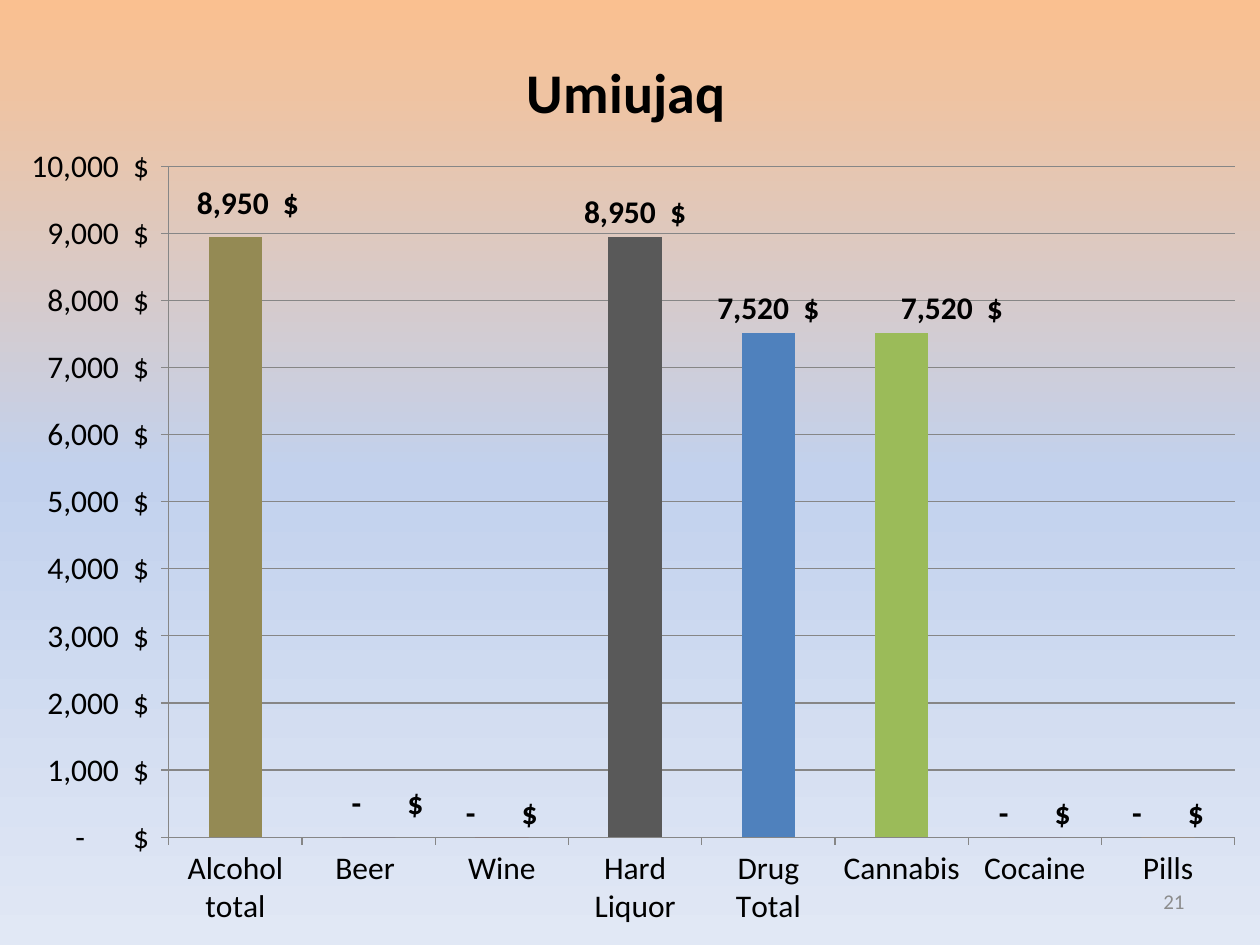
from copy import deepcopy

from lxml.etree import SubElement as Sub
from pptx import Presentation
from pptx.chart.data import CategoryChartData as Data
from pptx.dml.color import RGBColor
from pptx.enum.chart import XL_CHART_TYPE as Kind, XL_LABEL_POSITION as Spot
from pptx.enum.chart import XL_TICK_MARK as Tick
from pptx.enum.text import MSO_ANCHOR as Anchor, PP_ALIGN as Align
from pptx.oxml import parse_xml
from pptx.oxml.ns import nsdecls, qn
from pptx.util import Inches, Pt

MONEY = r'_ * #,##0_)\ "$"_ ;_ * \(#,##0\)\ "$"_ ;_ * "-"??_)\ "$"_ ;_ @_ '
SALES = {
    "Alcohol total": (8950, "948A54"),
    "Beer ": (0, "604A7B"),
    "Wine": (0, "953735"),
    "Hard Liquor": (8950, "595959"),
    "Drug Total": (7520, "4F81BD"),
    "Cannabis": (7520, "9BBB59"),
    "Cocaine": (0, "8064A2"),
    "Pills": (0, "F79646"),
}
# Labels moved off their bars, as shares of the chart
SHIFTS = {0: (0.01, -0.01), 1: (0.015, -0.01), 5: (0.04, 0)}


def paint(code):
    return RGBColor.from_string(code)


def style(font, size=18, bold=False, color="000000", name="Calibri"):
    font.size, font.bold, font.name = Pt(size), bold, name
    font.color.rgb = paint(color)


def write(frame, text, align=Align.CENTER, **form):
    para = frame.paragraphs[0]
    para.alignment = align
    run = para.add_run()
    run.text = text
    style(run.font, **form)


def place(node, index, **parts):
    """Give a chart part a manual layout, in shares of the chart."""
    for old in node.findall(qn("c:layout")):
        node.remove(old)
    box = parse_xml(f"<c:layout {nsdecls('c')}><c:manualLayout/></c:layout>")
    for key, value in parts.items():
        Sub(box[0], qn(f"c:{key}")).set("val", str(value))
    node.insert(index, box)


class Deck:
    line = "868686"

    def __init__(self, wide=10, high=7.5):
        self.show = Presentation()
        self.show.slide_width, self.show.slide_height = Inches(wide), Inches(high)
        self.slide = self.show.slides.add_slide(self.show.slide_layouts[6])

    def area(self, x, y, w, h):
        wide, high = self.show.slide_width, self.show.slide_height
        return [int(v) for v in (x * wide, y * high, w * wide, h * high)]

    def back(self, *colors):
        fill = self.slide.background.fill
        fill.gradient()
        fill.gradient_angle = 270
        stops = self.slide.element.xpath(".//a:gsLst")[0]
        while len(stops) < len(colors):
            stops.append(deepcopy(stops[0]))
        for i, (stop, color) in enumerate(zip(fill.gradient_stops, colors)):
            stop.position = i / (len(colors) - 1)
            stop.color.rgb = paint(color)

    def text(self, text, box, **form):
        frame = self.slide.shapes.add_textbox(*self.area(*box)).text_frame
        frame.word_wrap = True
        frame.vertical_anchor = Anchor.MIDDLE
        write(frame, text, **form)

    def axis(self, axis):
        axis.major_tick_mark, axis.minor_tick_mark = Tick.OUTSIDE, Tick.NONE
        axis.format.line.color.rgb = paint(self.line)
        axis.format.line.width = Pt(0.75)
        style(axis.tick_labels.font)

    def bars(self, title, rows, box):
        data = Data(number_format=MONEY)
        data.categories = list(rows)
        data.add_series(title, [value for value, _ in rows.values()])
        chart = self.slide.shapes.add_chart(
            Kind.COLUMN_CLUSTERED, *self.area(*box), data).chart
        style(chart.font)
        chart.has_legend = False

        # Title and plot area
        write(chart.chart_title.text_frame, title, size=32, bold=True)
        chart.chart_title.include_in_layout = False
        place(chart.element.xpath(".//c:title")[0], 1,
              xMode="edge", yMode="edge", x=0.41, y=0.045)
        place(chart.element.xpath(".//c:plotArea")[0], 0,
              layoutTarget="inner", xMode="edge", yMode="edge",
              x=0.134, y=0.176, w=0.846, h=0.71)

        # Axes
        self.axis(chart.category_axis)
        scale = chart.value_axis
        self.axis(scale)
        scale.minimum_scale, scale.maximum_scale = 0, 10000
        scale.major_unit = 1000
        scale.tick_labels.number_format = MONEY
        scale.tick_labels.number_format_is_linked = False
        grid = scale.major_gridlines.format.line
        grid.color.rgb, grid.width = paint(self.line), Pt(0.75)

        # Columns
        plot = chart.plots[0]
        plot.gap_width, plot.vary_by_categories = 150, False
        bars = plot.series[0]
        bars.format.fill.solid()
        bars.format.fill.fore_color.rgb = paint("4F81BD")
        for i, (_, color) in enumerate(rows.values()):
            fill = bars.points[i].format.fill
            fill.solid()
            fill.fore_color.rgb = paint(color)

        # Value labels
        tags = bars.data_labels
        tags.show_value = True
        tags.number_format, tags.number_format_is_linked = MONEY, False
        tags.position = Spot.OUTSIDE_END
        style(tags.font, bold=True)
        for i in SHIFTS:
            tag = bars.points[i].data_label
            style(tag.font, bold=True)
            tag.position = Spot.OUTSIDE_END
        form = chart.element.xpath(".//c:dLbls/c:numFmt")[0]
        nodes = chart.element.xpath(".//c:dLbl")
        for node, (x, y) in zip(nodes, SHIFTS.values()):
            node.insert(1, deepcopy(form))
            place(node, 1, x=x, y=y)


def main():
    deck = Deck()
    deck.back("FAC090", "C2D1ED", "E1E8F5")
    deck.bars("Umiujaq", SALES, (0, 0, 1, 1))
    # Slide number
    deck.text("21", (0.717, 0.927, 0.233, 0.053),
              align=Align.RIGHT, size=12, color="8C8C8C")
    deck.show.save("out.pptx")


if __name__ == "__main__":
    main()
